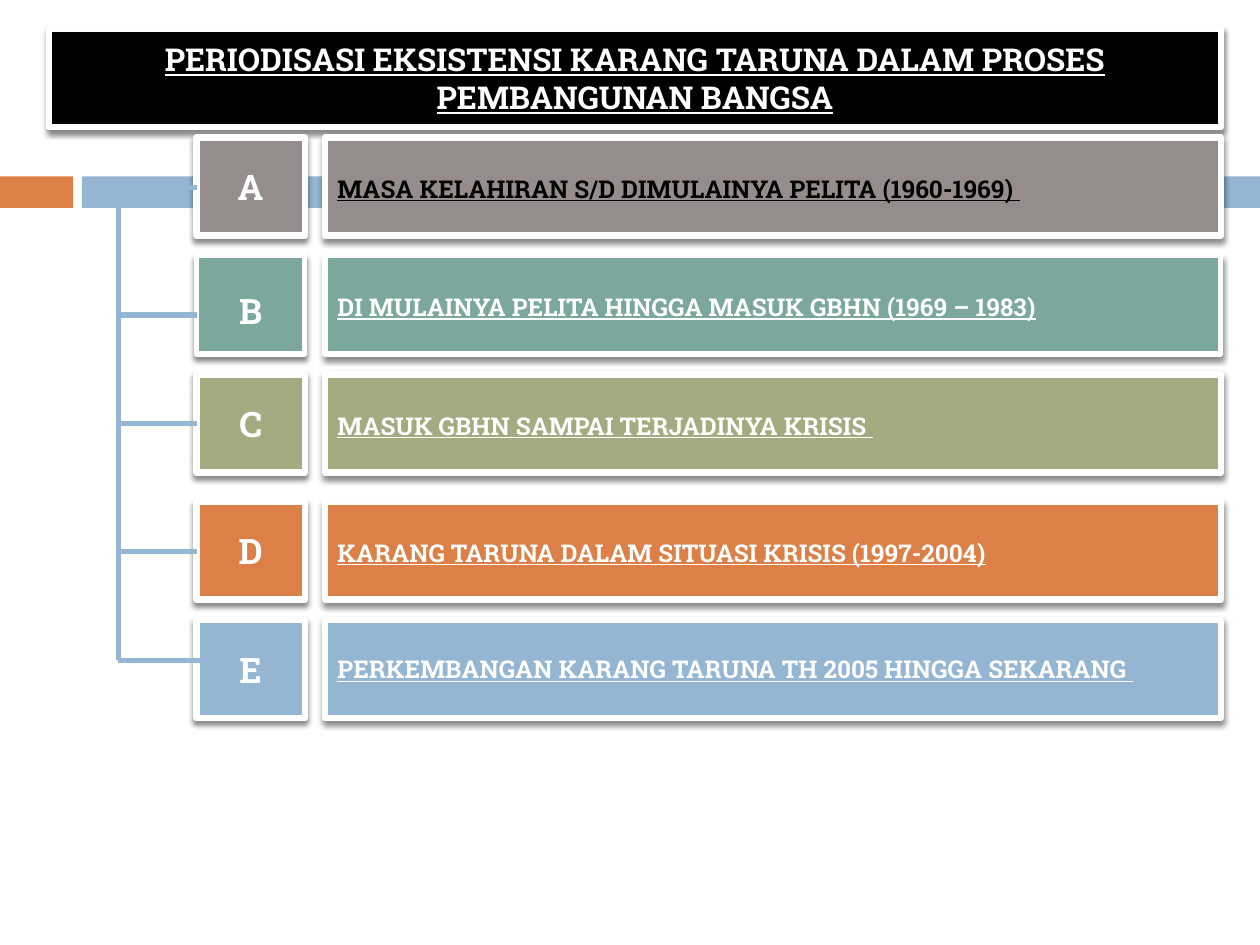
"""Build the slide on the five periods of Karang Taruna."""
from dataclasses import dataclass

import lxml.etree
import pptx
import pptx.dml.color
import pptx.enum.shapes
import pptx.enum.text
import pptx.oxml
import pptx.oxml.ns
import pptx.util

Inches = pptx.util.Inches
Pt = pptx.util.Pt
ALIGN = pptx.enum.text.PP_ALIGN
FONT = "Roboto Slab"
HUES = {
    "black": "000000",
    "white": "FFFFFF",
    "gray": "968C8C",
    "teal": "7BA79D",
    "olive": "A5AB81",
    "orange": "DD8047",
    "blue": "94B6D2",
}
SHADE = (
    f'<a:effectLst {pptx.oxml.ns.nsdecls("a")}>'
    '<a:outerShdw blurRad="38100" dist="30480" dir="5400000" rotWithShape="0">'
    f'<a:srgbClr val="{HUES["black"]}"><a:alpha val="45000"/></a:srgbClr>'
    "</a:outerShdw></a:effectLst>"
)
HIGH = 0.78
TRUNK = 0.94


@dataclass
class Text:
    words: str
    size: float
    ink: str = "white"
    line: bool = True
    align: ALIGN = ALIGN.CENTER
    drop: float = 0


@dataclass
class Row:
    mark: str
    label: str
    top: float
    hue: str
    branch: float
    ink: str = "white"
    edge: float = 3.75
    sink: float = 0
    drop: float = 0.03
    reach: float = 1.56


ROWS = [
    Row("A", "MASA KELAHIRAN S/D DIMULAINYA PELITA (1960-1969) ", 1.09, "gray", 1.49, ink="black"),
    Row("B", "DI MULAINYA PELITA HINGGA MASUK GBHN (1969 – 1983)", 2.03, "teal", 2.5, edge=3, sink=0.09),
    Row("C", "MASUK GBHN SAMPAI TERJADINYA KRISIS ", 2.97, "olive", 3.36),
    Row("D", "KARANG TARUNA DALAM SITUASI KRISIS (1997-2004)", 3.98, "orange", 4.38),
    Row("E", "PERKEMBANGAN KARANG TARUNA TH 2005 HINGGA SEKARANG ", 4.92, "blue", 5.24, drop=0, reach=1.64),
]


def color(name: str) -> pptx.dml.color.RGBColor:
    """Return the named colour."""
    return pptx.dml.color.RGBColor.from_string(HUES[name])


def block(slide, left: float, top: float, width: float, high: float, hue: str):
    """Draw a plain filled rectangle."""
    shape = slide.shapes.add_shape(
        pptx.enum.shapes.MSO_SHAPE.RECTANGLE,
        Inches(left), Inches(top), Inches(width), Inches(high),
    )
    shape.shadow.inherit = False
    shape.fill.solid()
    shape.fill.fore_color.rgb = color(hue)
    shape.line.fill.background()
    return shape


def panel(slide, left: float, top: float, width: float, hue: str, edge: float, text: Text) -> None:
    """Draw a framed, shadowed panel with text."""
    shape = block(slide, left, top, width, HIGH, hue)
    shape.line.color.rgb = color("white")
    shape.line.width = Pt(edge)
    props = shape._element.spPr
    props.remove(props.find(pptx.oxml.ns.qn("a:effectLst")))
    props.append(pptx.oxml.parse_xml(SHADE))
    frame = shape.text_frame
    frame.word_wrap = True
    frame.vertical_anchor = pptx.enum.text.MSO_ANCHOR.MIDDLE
    frame.margin_top = Inches(0.05 + text.drop)
    frame.text = text.words
    para = frame.paragraphs[0]
    para.alignment = text.align
    font = para.runs[0].font
    font.name, font.size, font.bold = FONT, Pt(text.size), True
    font.underline = text.line
    font.color.rgb = color(text.ink)


def link(slide, left: float, top: float, right: float, low: float) -> None:
    """Draw one line of the tree."""
    line = slide.shapes.add_connector(
        pptx.enum.shapes.MSO_CONNECTOR.STRAIGHT,
        Inches(left), Inches(top), Inches(right), Inches(low),
    )
    line.line.color.rgb = color("blue")
    line.line.width = Pt(3)
    lxml.etree.SubElement(line._element.spPr, pptx.oxml.ns.qn("a:effectLst"))


def main() -> None:
    """Build and save the slide."""
    deck = pptx.Presentation()
    deck.slide_width, deck.slide_height = Inches(10), Inches(7.5)
    slide = deck.slides.add_slide(deck.slide_layouts[6])
    block(slide, 0, 1.4, 0.58, 0.25, "orange")
    block(slide, 0.65, 1.4, 9.35, 0.25, "blue")
    title = "PERIODISASI EKSISTENSI KARANG TARUNA DALAM PROSES PEMBANGUNAN BANGSA"
    panel(slide, 0.39, 0.23, 9.3, "black", 3.75, Text(title, 18))
    for row in ROWS:
        mark = Text(row.mark, 20, line=False, drop=row.sink)
        label = Text(row.label, 14, row.ink, align=ALIGN.JUSTIFY, drop=row.drop)
        panel(slide, 1.56, row.top, 0.86, row.hue, row.edge, mark)
        panel(slide, 2.58, row.top, 7.11, row.hue, row.edge, label)
    link(slide, TRUNK, ROWS[0].branch, TRUNK, ROWS[-1].branch)
    for row in ROWS:
        link(slide, TRUNK, row.branch, row.reach, row.branch)
    deck.save("out.pptx")


if __name__ == "__main__":
    main()
